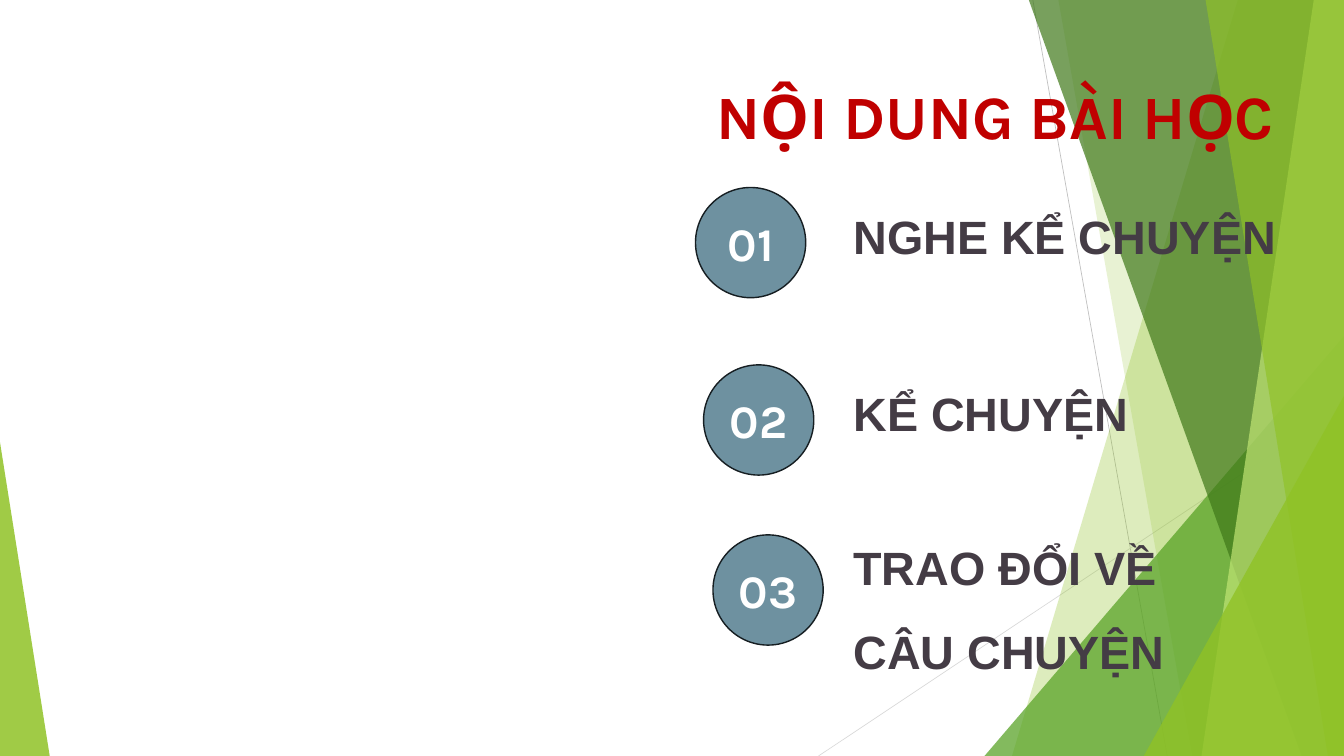
from pptx import Presentation
from pptx.dml.color import RGBColor
from pptx.enum.shapes import MSO_CONNECTOR, MSO_SHAPE
from pptx.enum.text import MSO_ANCHOR, MSO_AUTO_SIZE, PP_ALIGN
from pptx.oxml.ns import qn
from pptx.util import Inches, Pt
from lxml.etree import SubElement

WHITE = RGBColor(0xFF, 0xFF, 0xFF)
LIME = RGBColor(0x90, 0xC2, 0x26)
PALE_LIME = RGBColor(0xC0, 0xE4, 0x74)
GREEN = RGBColor(0x54, 0xA0, 0x21)
DARK_GREEN = RGBColor(0x3F, 0x78, 0x19)
GRAY = RGBColor(0xBF, 0xBF, 0xBF)
LIGHT_GRAY = RGBColor(0xD9, 0xD9, 0xD9)
RED = RGBColor(0xC0, 0x00, 0x00)
PLUM = RGBColor(0x44, 0x3C, 0x45)
SLATE = RGBColor(0x6E, 0x91, 0xA0)
INK = RGBColor(0x16, 0x1E, 0x22)

WIDTH, HEIGHT = 20, 11.25


def write_text(frame, text, size=50, font="Arial", color=PLUM, align=PP_ALIGN.LEFT, spacing=None):
    frame.word_wrap = True
    paragraph = frame.paragraphs[0]
    paragraph.alignment = align
    paragraph.line_spacing = spacing
    run = paragraph.add_run()
    run.text = text
    run.font.size = Pt(size)
    run.font.name = font
    run.font.bold = True
    run.font.color.rgb = color


def add_label(slide, box, text, **text_format):
    frame = slide.shapes.add_textbox(*map(Inches, box)).text_frame
    frame.margin_left = frame.margin_right = frame.margin_top = frame.margin_bottom = 0
    frame.auto_size = MSO_AUTO_SIZE.SHAPE_TO_FIT_TEXT
    write_text(frame, text, **text_format)


def paint_facet(facet, color, opacity):
    facet.shadow.inherit = False
    facet.fill.solid()
    facet.fill.fore_color.rgb = color
    facet.line.fill.background()
    color_node = facet.fill._xPr.find(qn("a:solidFill"))[0]
    SubElement(color_node, qn("a:alpha"), val=str(opacity * 1000))


def add_hairline(slide, start, end, color):
    hairline = slide.shapes.add_connector(MSO_CONNECTOR.STRAIGHT, *map(Inches, start + end))
    hairline.line.color.rgb = color
    hairline.line.width = Pt(0.75)
    SubElement(hairline._element.spPr, qn("a:effectLst"))


def add_band(slide, box, top_x, bottom_x, color, opacity):
    left, top, width, height = box
    right, bottom = left + width, top + height
    corners = [(top_x, top), (right, top), (right, bottom), (bottom_x, bottom)]
    points = [(Inches(x), Inches(y)) for x, y in corners]
    builder = slide.shapes.build_freeform(*points[0])
    builder.add_line_segments(points[1:], close=True)
    paint_facet(builder.convert_to_shape(), color, opacity)


def add_wedge(slide, box, apex, color, opacity):
    wedge = slide.shapes.add_shape(MSO_SHAPE.ISOSCELES_TRIANGLE, *map(Inches, box))
    wedge.adjustments[0] = apex
    paint_facet(wedge, color, opacity)


def add_backdrop(slide, box):
    left, top, width, height = box
    right, bottom = left + width, top + height

    def corner_wedge(wedge_width, wedge_height, color, opacity):
        corner = (right - wedge_width, bottom - wedge_height, wedge_width, wedge_height)
        add_wedge(slide, corner, 1, color, opacity)

    add_hairline(slide, (left + 15.37, top), (left + 17.37, bottom), GRAY)
    add_hairline(slide, (right, top + 6.04), (left + 12.18, bottom), LIGHT_GRAY)
    add_band(slide, box, left + 18.42, left + 15.06, LIME, 30)
    add_band(slide, box, left + 15.75, left + 17.74, LIME, 20)
    corner_wedge(5.35, 6.25, GREEN, 72)
    add_band(slide, box, left + 15.31, left + 19.37, DARK_GREEN, 70)
    add_band(slide, box, left + 19.55, left + 17.88, PALE_LIME, 70)
    add_band(slide, box, left + 17.94, left + 19.76, LIME, 65)
    corner_wedge(2.98, 5.36, LIME, 80)
    add_wedge(slide, (left, bottom - 4.67, 0.74, 4.67), 0, LIME, 85)


def add_badge(slide, box, number):
    badge = slide.shapes.add_shape(MSO_SHAPE.OVAL, *map(Inches, box))
    badge.shadow.inherit = False
    badge.fill.solid()
    badge.fill.fore_color.rgb = SLATE
    badge.line.color.rgb = INK
    badge.line.width = Pt(1.5)
    badge.text_frame.vertical_anchor = MSO_ANCHOR.MIDDLE
    write_text(badge.text_frame, f"{number:02}", font="Karla", color=WHITE, align=PP_ALIGN.CENTER)


def add_agenda(slide, box):
    left, top, width, height = box
    diameter = 1.64
    label_left = left + 2.35
    single_line = Pt(41.4)
    items = [
        ("NGHE KỂ CHUYỆN", 0, 0, 0.56, 7.22, 0.59, single_line),
        ("KỂ CHUYỆN", 0.12, 2.64, 3.2, 5.93, 0.59, single_line),
        ("TRAO ĐỔI VỀ CÂU CHUYỆN", 0.26, 5.17, 4.81, 5.38, 2.37, 1.5),
    ]
    for number, item in enumerate(items, start=1):
        topic, badge_x, badge_y, label_y, label_width, label_height, spacing = item
        add_label(slide, (label_left, top + label_y, label_width, label_height), topic, spacing=spacing)
        add_badge(slide, (left + badge_x, top + badge_y, diameter, diameter), number)


def main():
    presentation = Presentation()
    presentation.slide_width = Inches(WIDTH)
    presentation.slide_height = Inches(HEIGHT)
    slide = presentation.slides.add_slide(presentation.slide_layouts[6])
    add_backdrop(slide, (0, 0, WIDTH, HEIGHT))
    add_label(slide, (10.18, 0.87, 9.26, 1.29), "NỘI DUNG BÀI HỌC", size=66, font="Karla",
              color=RED, align=PP_ALIGN.CENTER, spacing=Pt(99.6))
    add_agenda(slide, (10.35, 2.79, 9.57, 7.18))
    presentation.save("out.pptx")


if __name__ == "__main__":
    main()
